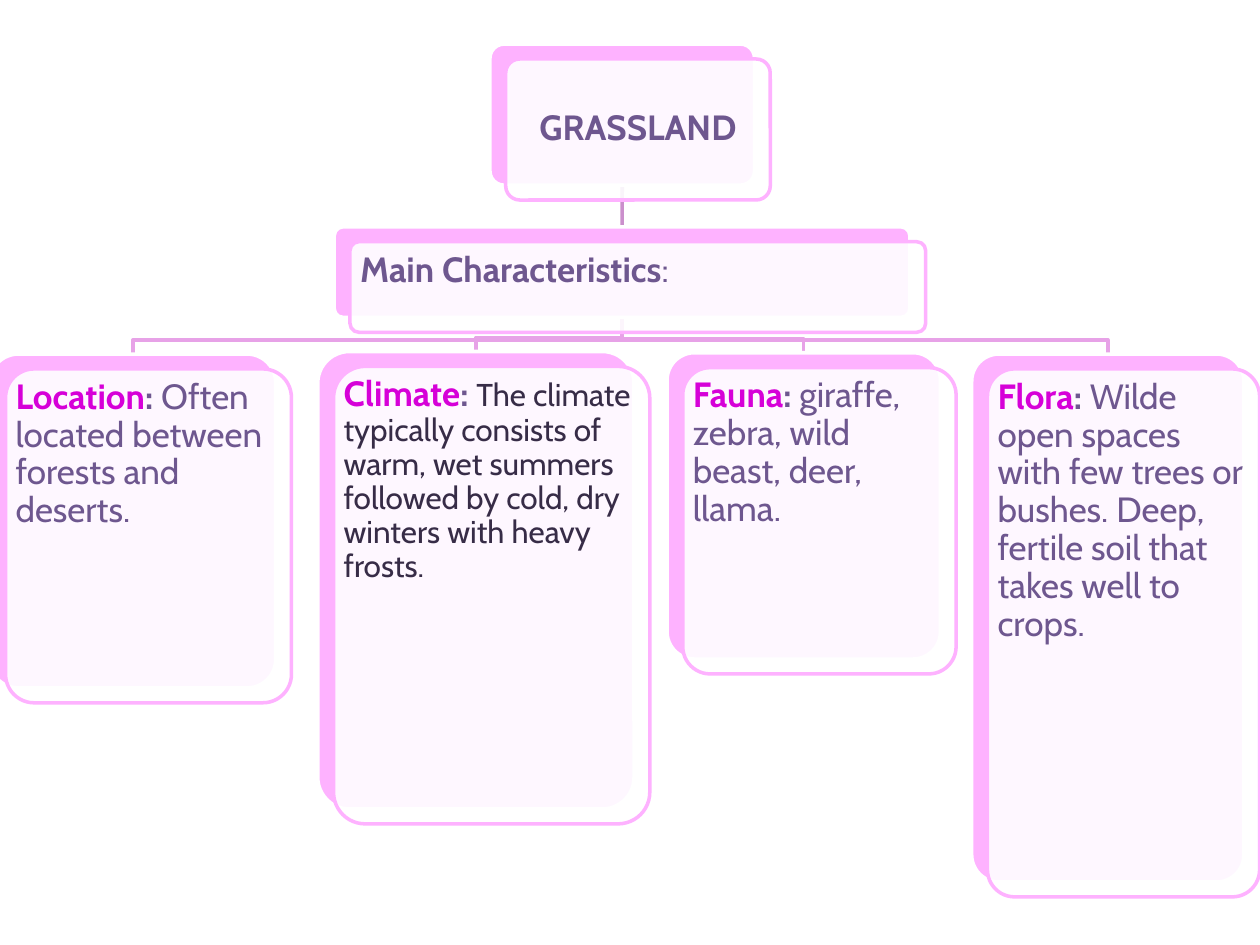
"""Build the grassland characteristics hierarchy slide."""
from lxml.etree import SubElement
from pptx import Presentation
from pptx.dml.color import RGBColor
from pptx.enum.shapes import MSO_CONNECTOR, MSO_SHAPE
from pptx.enum.text import MSO_ANCHOR, MSO_AUTO_SIZE, PP_ALIGN
from pptx.oxml.ns import qn
from pptx.util import Pt

WHITE = RGBColor(0xFF, 0xFF, 0xFF)
PINK = RGBColor(0xFE, 0xB2, 0xFF)
MAGENTA = RGBColor(0xD6, 0x00, 0xD8)
PURPLE = RGBColor(0x6E, 0x57, 0x8F)
DARK = RGBColor(0x37, 0x2C, 0x47)
BRANCH = RGBColor(0xE7, 0xA2, 0xE7)
TRUNK = RGBColor(0xCB, 0x8F, 0xCC)

FONT = "Cabin"
LINE_WIDTH = 2
OFFSET_X, OFFSET_Y = 9, 8.5
INSET = 5.76
BEND_HEIGHT = 8

ROOT_BOX = (280, 25.2, 151.2, 80.6)
MAIN_BOX = (191, 129.6, 329, 51.8)
ROOT_TEXT = "GRASSLAND"
MAIN_RUNS = [("Main Characteristics", 20, PURPLE, True), (":", 20, PURPLE, False)]

TOPICS = [
    ("Location", "Often located between forests and deserts.",
     20, PURPLE, (-5.8, 202.3, 163.4, 190.8)),
    ("Climate", "The climate typically consists of warm, wet summers followed by "
     "cold, dry winters with heavy frosts.",
     18, DARK, (181.6, 200.9, 180.7, 261.4)),
    ("Fauna", "giraffe, zebra, wild beast, deer, llama.",
     20, PURPLE, (381.2, 201.6, 156.2, 175)),
    ("Flora", "Wilde open spaces with few trees or bushes. Deep, fertile soil "
     "that takes well to crops.",
     20, PURPLE, (555.3, 202.3, 155.5, 301.7)),
]


def shift(box):
    left, top, width, height = box
    return left + OFFSET_X, top + OFFSET_Y, width, height


def add_panel(slide, box, fill, line):
    panel = slide.shapes.add_shape(MSO_SHAPE.ROUNDED_RECTANGLE, *map(Pt, box))
    panel.adjustments[0] = 0.1
    panel.shadow.inherit = False
    panel.fill.solid()
    panel.fill.fore_color.rgb = fill
    panel.line.color.rgb = line
    panel.line.width = Pt(LINE_WIDTH)
    return panel


def add_card(slide, box):
    back = add_panel(slide, box, PINK, WHITE)
    front = add_panel(slide, shift(box), WHITE, PINK)
    color = front.fill._xPr.find(qn("a:solidFill")).find(qn("a:srgbClr"))
    SubElement(color, qn("a:alpha")).set("val", "90000")
    return back


def write_text(shape, runs, alignment=PP_ALIGN.LEFT, anchor=MSO_ANCHOR.TOP):
    frame = shape.text_frame
    frame.word_wrap = True
    frame.auto_size = MSO_AUTO_SIZE.NONE
    frame.vertical_anchor = anchor
    frame.margin_left = frame.margin_right = Pt(INSET)
    frame.margin_top = frame.margin_bottom = Pt(INSET)
    paragraph = frame.paragraphs[0]
    paragraph.alignment = alignment
    paragraph.line_spacing = 0.9
    paragraph.space_before = Pt(0)
    paragraph.font.name = FONT
    for text, size, color, bold in runs:
        run = paragraph.add_run()
        run.text = text
        run.font.name = FONT
        run.font.size = Pt(size)
        run.font.color.rgb = color
        run.font.bold = bold


def add_text_card(slide, box, runs):
    back = add_card(slide, box)
    write_text(slide.shapes.add_textbox(*map(Pt, shift(box))), runs)
    return back


def add_branch(slide, parent_box, child_box):
    left, top, width, height = parent_box
    start_x, start_y = left + width / 2, top + height
    end_x, end_y = child_box[0] + child_box[2] / 2, child_box[1]
    bend_y = end_y - BEND_HEIGHT
    builder = slide.shapes.build_freeform(Pt(start_x), Pt(start_y))
    corners = [(start_x, bend_y), (end_x, bend_y), (end_x, end_y)]
    builder.add_line_segments([(Pt(x), Pt(y)) for x, y in corners], close=False)
    branch = builder.convert_to_shape()
    branch.shadow.inherit = False
    branch.fill.background()
    branch.line.color.rgb = BRANCH
    branch.line.width = Pt(LINE_WIDTH)


def add_trunk(slide, parent, child):
    trunk = slide.shapes.add_connector(MSO_CONNECTOR.STRAIGHT, 0, 0, 0, 0)
    trunk.begin_connect(parent, 2)
    trunk.end_connect(child, 0)
    trunk.line.color.rgb = TRUNK
    trunk.line.width = Pt(LINE_WIDTH)
    SubElement(trunk._element.spPr, qn("a:effectLst"))
    slide.shapes._spTree.insert(2, trunk._element)


def main():
    presentation = Presentation()
    presentation.slide_width, presentation.slide_height = Pt(720), Pt(540)
    slide = presentation.slides.add_slide(presentation.slide_layouts[5])

    for topic in reversed(TOPICS):
        add_branch(slide, MAIN_BOX, topic[-1])

    root = add_card(slide, ROOT_BOX)
    title = slide.shapes.title
    title.left, title.top, title.width, title.height = map(Pt, shift(ROOT_BOX))
    write_text(title, [(ROOT_TEXT, 20, PURPLE, True)],
               PP_ALIGN.CENTER, MSO_ANCHOR.MIDDLE)
    slide.shapes._spTree.append(title._element)

    characteristics = add_text_card(slide, MAIN_BOX, MAIN_RUNS)
    add_trunk(slide, root, characteristics)

    for label, description, size, color, box in TOPICS:
        add_text_card(slide, box, [
            (label, 20, MAGENTA, True),
            (": ", 20, PURPLE, True),
            (description, size, color, False),
        ])

    presentation.save("out.pptx")


if __name__ == "__main__":
    main()
